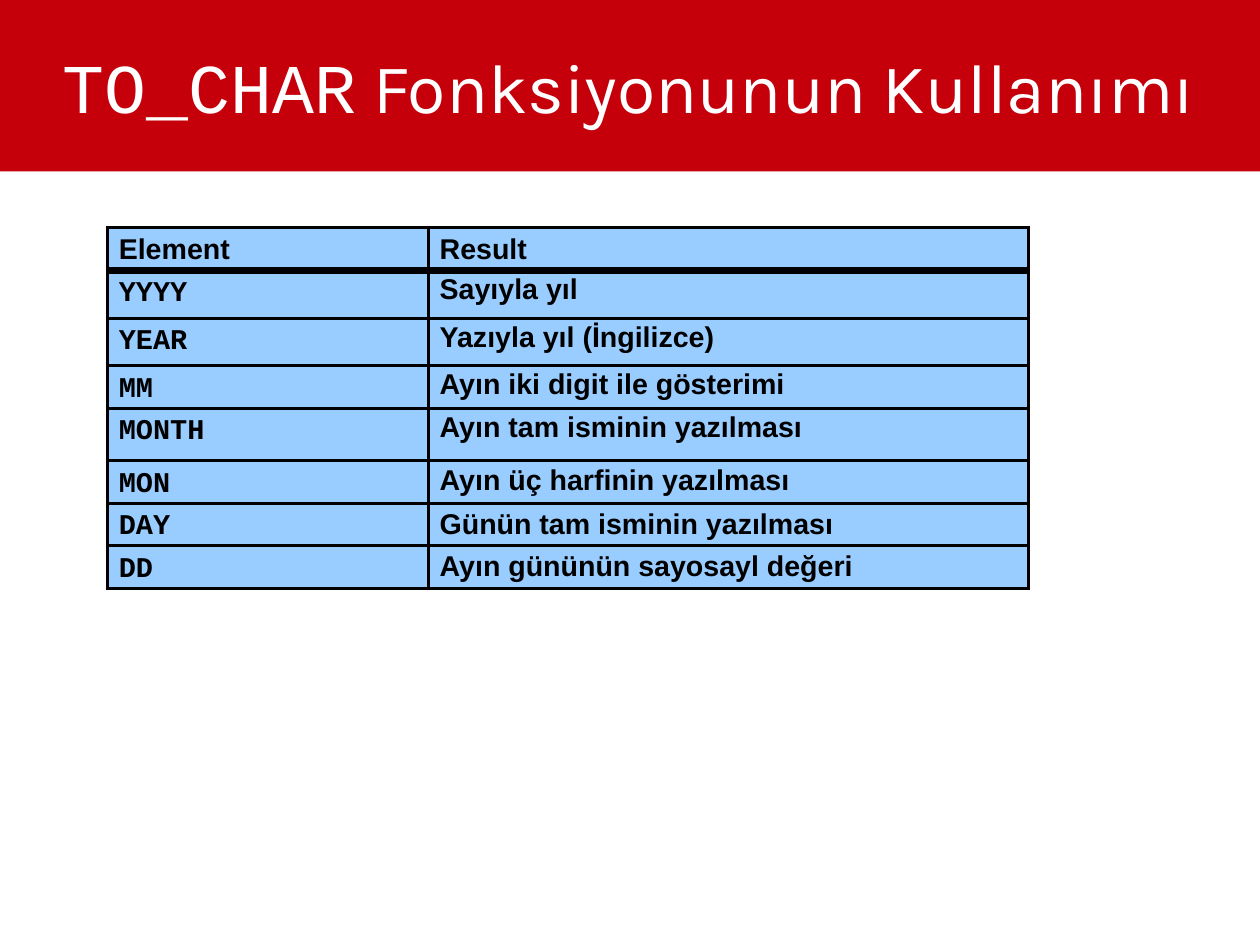
"""Slide on the TO_CHAR function: a title band and a table of date elements."""
from typing import NamedTuple

from lxml import etree
from pptx import Presentation
from pptx.dml.color import RGBColor
from pptx.enum import shapes, text
from pptx.oxml import ns
from pptx.util import Cm, Pt

RED = RGBColor(0xC5, 0x00, 0x0B)
BLUE = RGBColor(0x99, 0xCC, 0xFF)
WHITE = RGBColor(0xFF, 0xFF, 0xFF)
BLACK = RGBColor(0x00, 0x00, 0x00)
SANS, MONO, TITLE = "Arial", "Courier New", "Karla"
THIN, THICK = Pt(2.25), Pt(4.5)


class Row(NamedTuple):
    """One table row: texts, height in cm and line spacing of each cell."""
    element: str
    result: str
    height: float
    element_spacing: float = 0.95
    result_spacing: float = 0.9


ROWS = [
    Row("Element", "Result", 0.95, 1.0, 1.0),
    Row("YYYY", "Sayıyla yıl", 1.07, 0.9),
    Row("YEAR", "Yazıyla yıl (İngilizce)", 1.05, 0.9),
    Row("MM", "Ayın iki digit ile gösterimi", 0.94),
    Row("MONTH", "Ayın tam isminin yazılması", 1.16, 0.9),
    Row("MON", "Ayın üç harfinin yazılması", 0.94, 0.95, 0.95),
    Row("DAY", "Günün tam isminin yazılması", 0.95, 0.95, 1.0),
    Row("DD", "Ayın gününün sayosayl değeri", 0.94, 0.95, 0.95),
]
COLUMN_WIDTHS = (7.13, 13.33)


def add_title(s) -> None:
    """Draw the red band and the title on it."""
    band = s.shapes.add_shape(shapes.MSO_SHAPE.RECTANGLE, 0, 0, Cm(28), Cm(3.81))
    band.shadow.inherit = False
    band.fill.solid()
    band.fill.fore_color.rgb = RED
    band.line.fill.background()

    tf = s.shapes.add_textbox(Cm(1.4), Cm(0.15), Cm(26.6), Cm(3.5)).text_frame
    tf.word_wrap = True
    tf.vertical_anchor = text.MSO_ANCHOR.MIDDLE
    tf.margin_left = tf.margin_right = tf.margin_top = tf.margin_bottom = 0
    p = tf.paragraphs[0]
    p.font.size = Pt(44)
    p.font.color.rgb = WHITE
    for words, font in (("TO_CHAR", MONO), (" Fonksiyonunun Kullanımı", TITLE)):
        r = p.add_run()
        r.text = words
        r.font.name = font
        r.font.size = Pt(44)
        r.font.color.rgb = WHITE


def set_borders(cell, top: int, bottom: int) -> None:
    """Give a cell black borders, with its own top and bottom widths."""
    props = cell._tc.get_or_add_tcPr()
    sides = (("lnL", THIN), ("lnR", THIN), ("lnT", top), ("lnB", bottom))
    for i, (tag, width) in enumerate(sides):
        ln = etree.Element(ns.qn(f"a:{tag}"), w=str(int(width)))
        fill = etree.SubElement(ln, ns.qn("a:solidFill"))
        etree.SubElement(fill, ns.qn("a:srgbClr"), val=str(BLACK))
        props.insert(i, ln)


def fill_cell(cell, words: str, font: str, spacing: float) -> None:
    """Write a cell's text and colour its background."""
    cell.fill.solid()
    cell.fill.fore_color.rgb = BLUE
    cell.margin_left = cell.margin_right = Cm(0.25)
    cell.margin_top = Cm(0.17 if font == MONO else 0.13)
    cell.margin_bottom = Cm(0.05)
    p = cell.text_frame.paragraphs[0]
    p.text = words
    p.line_spacing = spacing
    p.font.name = font
    p.font.size = Pt(18)
    p.font.bold = True
    p.font.color.rgb = BLACK


def add_elements(s) -> None:
    """Draw the table of date elements."""
    table = s.shapes.add_table(
        len(ROWS), len(COLUMN_WIDTHS), Cm(2.39), Cm(5.06),
        Cm(sum(COLUMN_WIDTHS)), Cm(sum(row.height for row in ROWS))).table
    for column, width in zip(table.columns, COLUMN_WIDTHS):
        column.width = Cm(width)
    for i, row in enumerate(ROWS):
        table.rows[i].height = Cm(row.height)
        fill_cell(table.cell(i, 0), row.element, MONO if i else SANS, row.element_spacing)
        fill_cell(table.cell(i, 1), row.result, SANS, row.result_spacing)
        for cell in table.rows[i].cells:
            set_borders(cell, THICK if i == 1 else THIN, THICK if i == 0 else THIN)


def main() -> None:
    """Build and save the slide."""
    prs = Presentation()
    prs.slide_width, prs.slide_height = Cm(28), Cm(21)
    s = prs.slides.add_slide(prs.slide_layouts[6])
    add_title(s)
    add_elements(s)
    prs.save("out.pptx")


if __name__ == "__main__":
    main()
